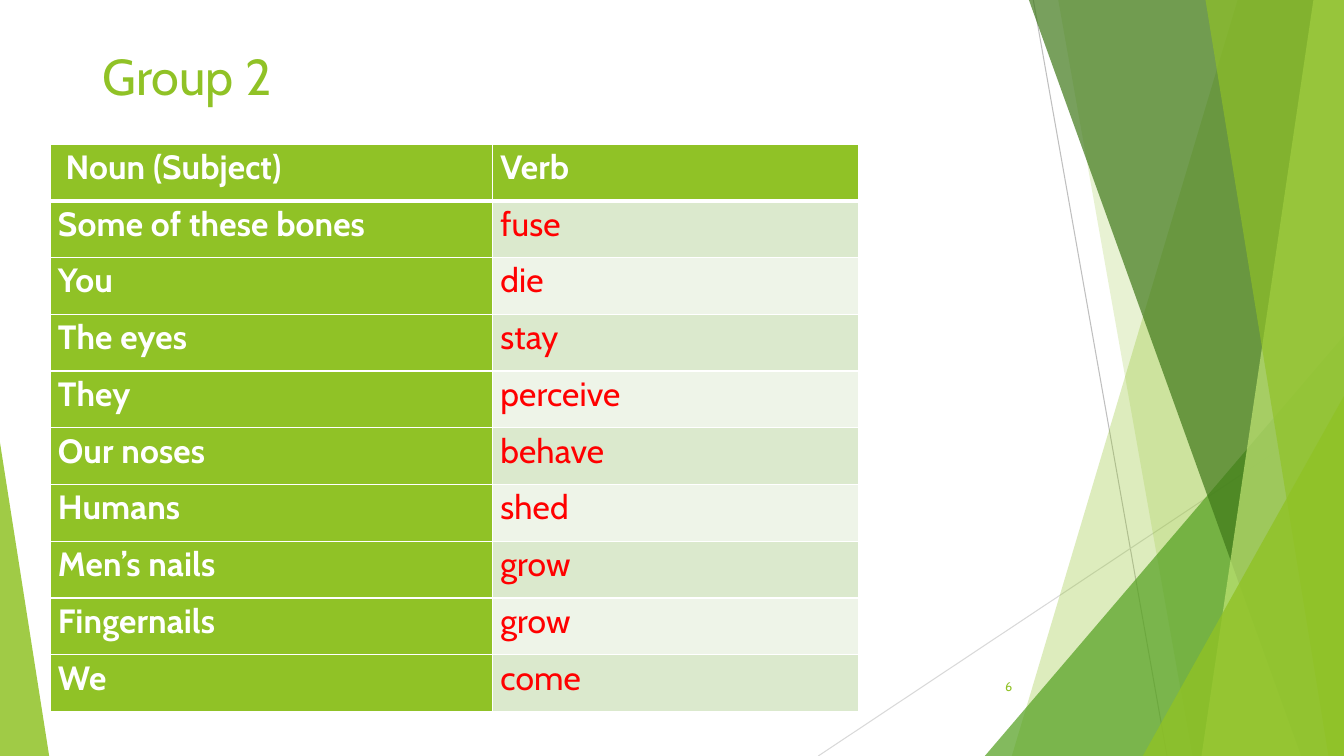
from pptx import Presentation
from pptx.dml.color import RGBColor
from pptx.enum.shapes import MSO_CONNECTOR as Connector, MSO_SHAPE as Shape
from pptx.enum.text import MSO_ANCHOR as Anchor, PP_ALIGN as Align
from pptx.oxml.ns import qn
from pptx.util import Cm, Pt
from lxml.etree import SubElement

WIDTH, HEIGHT = 33.87, 19.05
COLORS = {
    "lime": "90C226", "green": "54A021", "forest": "3F7819", "pale": "C0E474",
    "gray": "BFBFBF", "light gray": "D9D9D9", "white": "FFFFFF", "red": "FF0000",
    "band dark": "DBE9CD", "band light": "EEF4E8",
}
WORDS = [
    (" Noun (Subject)", "Verb"),
    ("Some of these bones", "fuse"),
    ("You", "die"),
    ("The eyes", "stay"),
    ("They", "perceive"),
    ("Our noses", "behave"),
    ("Humans", "shed"),
    ("Men’s nails", "grow"),
    ("Fingernails", "grow"),
    ("We", "come"),
]


class SlideBuilder:
    font = "Cabin"

    def __init__(self, page):
        self.page = page

    def color(self, name):
        return RGBColor.from_string(COLORS[name])

    def paint(self, shape, color, opacity):
        """Fill a shape with a see-through colour, without line or shadow."""
        shape.shadow.inherit = False
        shape.line.fill.background()
        shape.fill.solid()
        shape.fill.fore_color.rgb = self.color(color)
        tint = shape.fill._xPr.find(".//" + qn("a:srgbClr"))
        SubElement(tint, qn("a:alpha"), val=str(opacity * 1000))

    def line(self, start, end, color):
        line = self.page.shapes.add_connector(
            Connector.STRAIGHT, *(Cm(value) for value in start + end))
        line.line.color.rgb = self.color(color)
        line.line.width = Pt(0.75)
        SubElement(line._element.spPr, qn("a:effectLst"))

    def shard(self, top_left, bottom_left, color, opacity):
        """Draw a panel that reaches from a slanted left edge to the right side."""
        corners = [(top_left, 0), (WIDTH, 0), (WIDTH, HEIGHT), (bottom_left, HEIGHT)]
        points = [(Cm(x), Cm(y)) for x, y in corners]
        outline = self.page.shapes.build_freeform(*points[0], scale=1.0)
        outline.add_line_segments(points[1:], close=True)
        self.paint(outline.convert_to_shape(), color, opacity)

    def triangle(self, left, top, width, tip, color, opacity):
        """Draw a triangle standing on the bottom edge of the slide."""
        triangle = self.page.shapes.add_shape(
            Shape.ISOSCELES_TRIANGLE, Cm(left), Cm(top), Cm(width), Cm(HEIGHT - top))
        triangle.adjustments[0] = tip
        self.paint(triangle, color, opacity)

    def style(self, para, size, color, bold=False):
        for span in para.runs:
            span.font.name = self.font
            span.font.size = Pt(size)
            span.font.bold = bold
            span.font.color.rgb = self.color(color)

    def text(self, text, left, top, width, height, size,
             align=Align.LEFT, anchor=Anchor.TOP):
        box = self.page.shapes.add_textbox(Cm(left), Cm(top), Cm(width), Cm(height))
        frame = box.text_frame
        frame.word_wrap = True
        frame.vertical_anchor = anchor
        frame.text = text
        frame.paragraphs[0].alignment = align
        self.style(frame.paragraphs[0], size, "lime")

    def borders(self, cell, top, bottom):
        widths = {"a:lnL": 1, "a:lnR": 1, "a:lnT": top, "a:lnB": bottom}
        for side, width in widths.items():
            edge = SubElement(cell._tc.get_or_add_tcPr(), qn(side), w=str(Pt(width)))
            fill = SubElement(edge, qn("a:solidFill"))
            SubElement(fill, qn("a:srgbClr"), val=COLORS["white"])

    def cell(self, cell, text, row, is_label):
        self.borders(cell, 3 if row == 1 else 1, 3 if row == 0 else 1)
        band = "band dark" if row % 2 else "band light"
        cell.fill.solid()
        cell.fill.fore_color.rgb = self.color("lime" if is_label else band)
        cell.margin_left = cell.margin_right = Cm(0.19)
        cell.margin_top = cell.margin_bottom = 0
        cell.text_frame.text = text
        para = cell.text_frame.paragraphs[0]
        para.line_spacing = 1.07
        self.style(para, 24, "white" if is_label else "red", is_label)
        for span in para.runs:
            span.font._element.set("spc", "10")

    def table(self, rows, left, top, column_widths, row_height):
        table = self.page.shapes.add_table(
            len(rows), len(column_widths), Cm(left), Cm(top),
            Cm(sum(column_widths)), Cm(row_height * len(rows))).table
        for column, width in zip(table.columns, column_widths):
            column.width = Cm(width)
        for r, words in enumerate(rows):
            table.rows[r].height = Cm(row_height)
            for c, word in enumerate(words):
                self.cell(table.cell(r, c), word, r, r == 0 or c == 0)


def main():
    deck = Presentation()
    deck.slide_width, deck.slide_height = Cm(WIDTH), Cm(HEIGHT)
    slide = SlideBuilder(deck.slides.add_slide(deck.slide_layouts[6]))

    slide.line((26.04, 0), (29.41, HEIGHT), "gray")
    slide.line((WIDTH, 10.24), (20.62, HEIGHT), "light gray")
    slide.shard(31.19, 25.5, "lime", 30)
    slide.shard(26.67, 30.05, "lime", 20)
    slide.triangle(24.82, 8.46, 9.05, 1, "green", 72)
    slide.shard(25.93, 32.79, "forest", 70)
    slide.shard(33.1, 30.28, "pale", 70)
    slide.shard(30.38, 33.48, "lime", 65)
    slide.triangle(28.8, 9.98, 5.07, 1, "lime", 80)
    slide.triangle(0, 11.15, 1.24, 0, "lime", 85)

    slide.text("Group 2", 2.34, 1.02, 29.21, 2.62, 36)
    slide.table(WORDS, 1.27, 3.63, (11.15, 9.22), 1.43)
    slide.text("6", 23.85, 16.79, 1.91, 1.02, 9, Align.RIGHT, Anchor.MIDDLE)
    deck.save("out.pptx")


if __name__ == "__main__":
    main()
